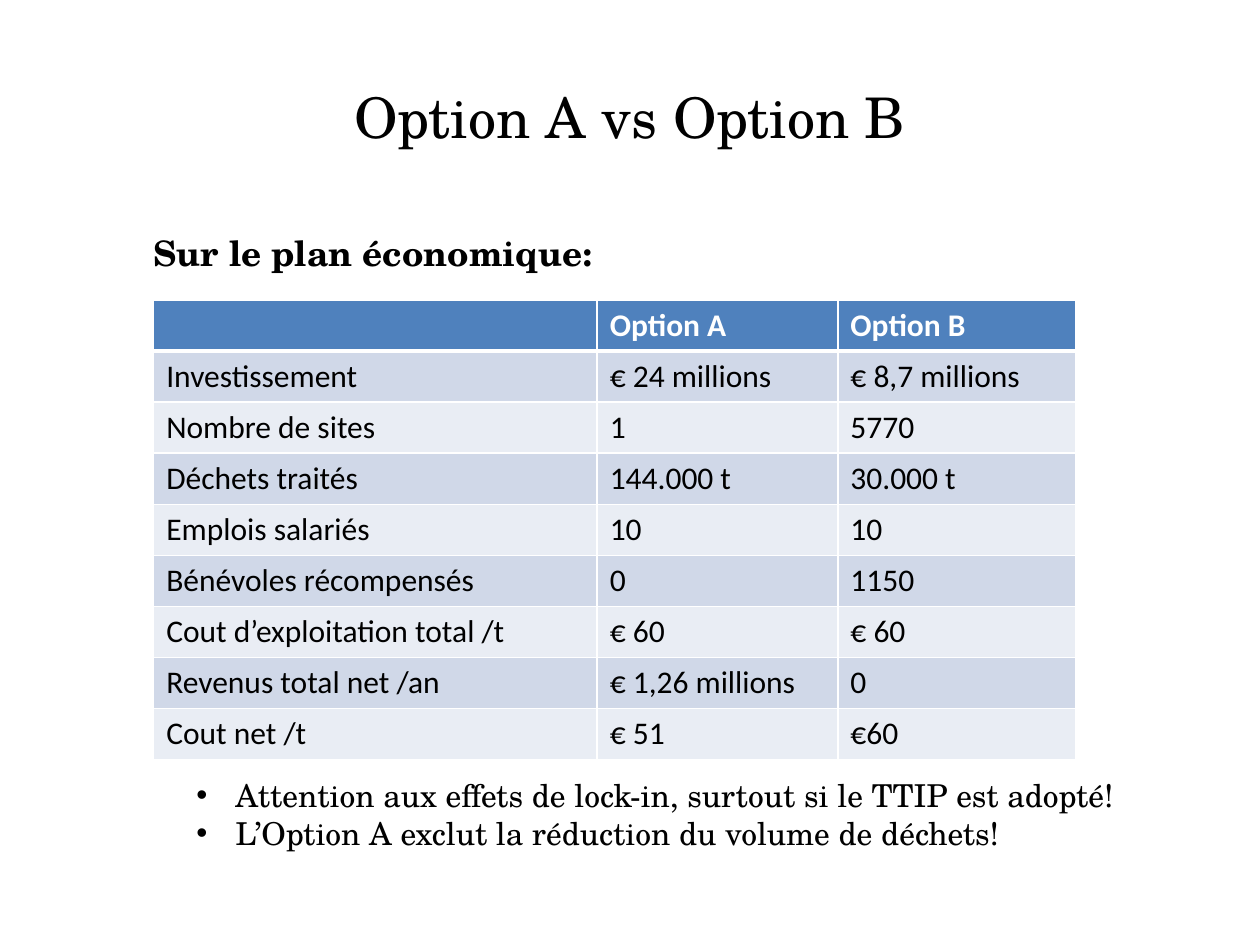
from lxml.etree import SubElement
from pptx import Presentation
from pptx.dml.color import RGBColor
from pptx.enum.text import MSO_ANCHOR as ANCHOR, PP_ALIGN as ALIGN
from pptx.oxml.ns import qn
from pptx.util import Inches, Pt

SERIF, SANS = "TeX Gyre Schola", "Calibri"
BLACK, WHITE, BLUE = "000000", "FFFFFF", "4F81BD"
BANDS = ("D0D8E8", "E9EDF4")

COLUMNS = (3.52, 1.91, 1.89)
ROWS = (
    ("", "Option A", "Option B"),
    ("Investissement", "€ 24 millions", "€ 8,7 millions"),
    ("Nombre de sites", "1", "5770"),
    ("Déchets traités", "144.000 t", "30.000 t"),
    ("Emplois salariés", "10", "10"),
    ("Bénévoles récompensés", "0", "1150"),
    ("Cout d’exploitation total /t", "€ 60", "€ 60"),
    ("Revenus total net /an", "€ 1,26 millions", "0"),
    ("Cout net /t", "€ 51", "€60"),
)
WARNINGS = (
    "Attention aux effets de lock-in, surtout si le TTIP est adopté!",
    "L’Option A exclut la réduction du volume de déchets!",
)


def rgb(value):
    return RGBColor.from_string(value)


def write(p, text, size=18, font=SERIF, color=BLACK, bold=False, align=ALIGN.LEFT):
    p.alignment = align
    r = p.add_run()
    r.text = text
    r.font.size = Pt(size)
    r.font.name = font
    r.font.bold = bold
    r.font.color.rgb = rgb(color)


def add_frame(slide, box, anchor=ANCHOR.TOP):
    tf = slide.shapes.add_textbox(*map(Inches, box)).text_frame
    tf.word_wrap = True
    tf.vertical_anchor = anchor
    return tf


def add_bullet(p, indent=0.31):
    pPr = p._p.get_or_add_pPr()
    pPr.set("marL", str(Inches(indent)))
    pPr.set("indent", str(-Inches(indent)))
    SubElement(pPr, qn("a:buFont"), typeface="Arial")
    SubElement(pPr, qn("a:buChar"), char="•")


def add_borders(cell, top=1, bottom=1):
    tcPr = cell._tc.get_or_add_tcPr()
    for side, width in zip("LRTB", (1, 1, top, bottom)):
        ln = SubElement(tcPr, qn(f"a:ln{side}"), w=str(Pt(width)))
        fill = SubElement(ln, qn("a:solidFill"))
        SubElement(fill, qn("a:srgbClr"), val=WHITE)


def add_title(slide, box):
    tf = add_frame(slide, box, ANCHOR.MIDDLE)
    write(tf.paragraphs[0], "Option A vs Option B", size=32, align=ALIGN.CENTER)


def add_subtitle(slide, box):
    tf = add_frame(slide, box)
    write(tf.paragraphs[0], "Sur le plan économique:", size=20, bold=True)


def add_comparison(slide, box):
    table = slide.shapes.add_table(len(ROWS), len(COLUMNS), *map(Inches, box)).table
    for column, width in zip(table.columns, COLUMNS):
        column.width = Inches(width)
    for i, texts in enumerate(ROWS):
        header = i == 0
        for j, text in enumerate(texts):
            cell = table.cell(i, j)
            add_borders(cell, top=3 if i == 1 else 1, bottom=3 if header else 1)
            cell.fill.solid()
            cell.fill.fore_color.rgb = rgb(BLUE if header else BANDS[(i - 1) % 2])
            if text:
                write(cell.text_frame.paragraphs[0], text, font=SANS,
                      color=WHITE if header else BLACK, bold=header)


def add_warnings(slide, box):
    tf = add_frame(slide, box)
    for i, text in enumerate(WARNINGS):
        p = tf.add_paragraph() if i else tf.paragraphs[0]
        add_bullet(p)
        write(p, text)


def main():
    prs = Presentation()
    prs.slide_width, prs.slide_height = Inches(10), Inches(7.5)
    slide = prs.slides.add_slide(prs.slide_layouts[6])
    add_title(slide, (0.5, 0.3, 9, 1.25))
    add_comparison(slide, (1.22, 2.38, sum(COLUMNS), 3.65))
    add_warnings(slide, (1.46, 6.11, 7.87, 0.71))
    add_subtitle(slide, (1.12, 1.79, 4.96, 0.44))
    prs.save("out.pptx")


if __name__ == "__main__":
    main()
